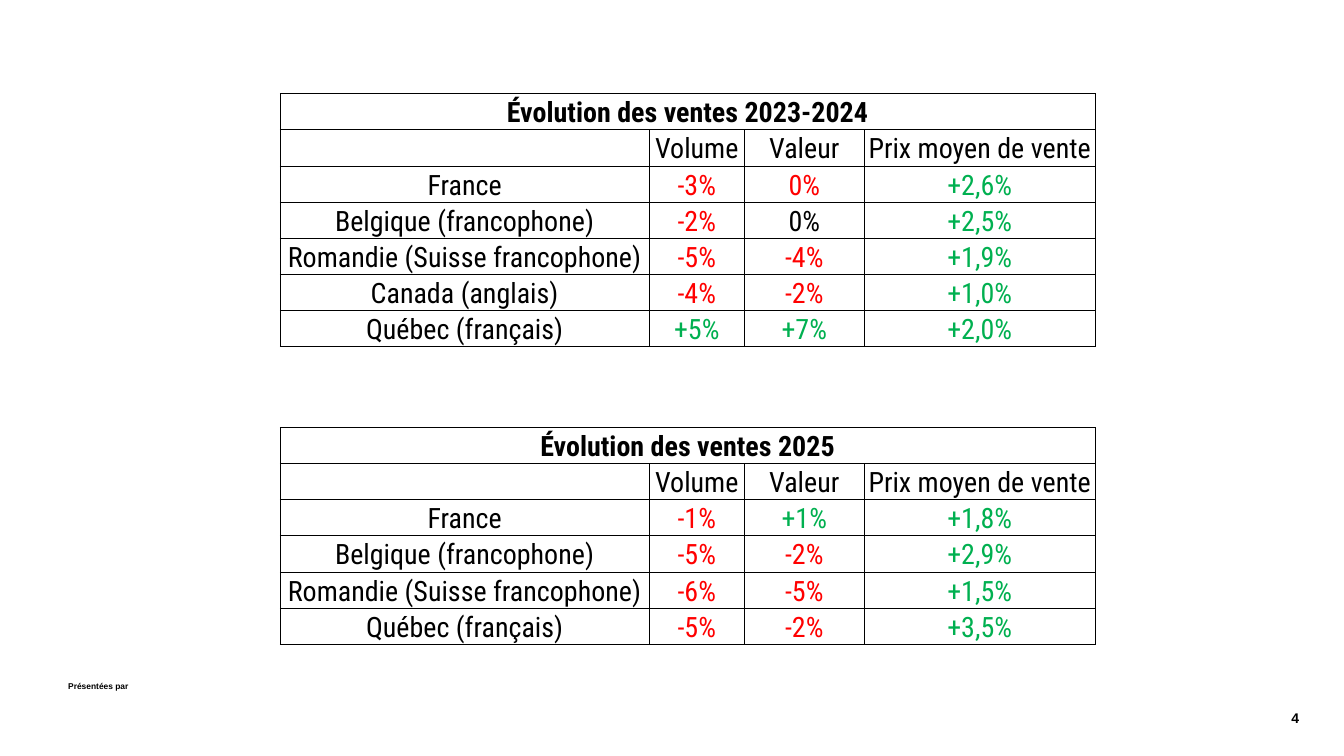
from dataclasses import dataclass

from lxml import etree
from pptx import Presentation
from pptx.dml.color import RGBColor
from pptx.enum.text import MSO_ANCHOR, PP_ALIGN
from pptx.oxml.ns import qn
from pptx.util import Cm, Pt

CENTER, LEFT, RIGHT = PP_ALIGN.CENTER, PP_ALIGN.LEFT, PP_ALIGN.RIGHT
BOTTOM = MSO_ANCHOR.BOTTOM

HEADINGS = ("", "Volume", "Valeur", "Prix moyen de vente")
SALES = [
    ("Évolution des ventes 2023-2024", 2.36, [
        ("France", "-3%", "0%", "+2,6%"),
        ("Belgique (francophone)", "-2%", "0%", "+2,5%"),
        ("Romandie (Suisse francophone)", "-5%", "-4%", "+1,9%"),
        ("Canada (anglais)", "-4%", "-2%", "+1,0%"),
        ("Québec (français)", "+5%", "+7%", "+2,0%"),
    ]),
    ("Évolution des ventes 2025", 10.77, [
        ("France", "-1%", "+1%", "+1,8%"),
        ("Belgique (francophone)", "-5%", "-2%", "+2,9%"),
        ("Romandie (Suisse francophone)", "-6%", "-5%", "+1,5%"),
        ("Québec (français)", "-5%", "-2%", "+3,5%"),
    ]),
]
RED_ZERO = ("France", "0%")
PRESENTER = ("Présentées par", (1.47, 17.04, 2.06, 0.51), 6, LEFT, False)
PAGE_NUMBER = ("4", (27.25, 17.75, 5.74, 0.69), 10, RIGHT, True)

TABLE_LEFT = 7.06
COLUMN_WIDTHS = (9.3, 2.4, 3.02, 5.82)
ROW_HEIGHT = 0.91
CELL_INSET = 0.02


@dataclass(frozen=True)
class Theme:
    table_font: str = "Roboto Condensed"
    footer_font: str = "Arial"
    table_size: int = 20
    border_width: float = 0.5
    ink: str = "000000"
    fall: str = "FF0000"
    rise: str = "00B050"


THEME = Theme()


def style(paragraph, font_name, size, color, bold, alignment):
    paragraph.alignment = alignment
    paragraph.font.name = font_name
    paragraph.font.size = Pt(size)
    paragraph.font.bold = bold
    paragraph.font.color.rgb = RGBColor.from_string(color)


def value_color(region, value):
    if value.startswith("-") or (region, value) == RED_ZERO:
        return THEME.fall
    return THEME.rise if value.startswith("+") else THEME.ink


def add_borders(cell):
    properties = cell._tc.get_or_add_tcPr()
    for side in ("a:lnL", "a:lnR", "a:lnT", "a:lnB"):
        border = etree.SubElement(properties, qn(side), w=str(Pt(THEME.border_width)))
        fill = etree.SubElement(border, qn("a:solidFill"))
        etree.SubElement(fill, qn("a:srgbClr"), val=THEME.ink)


def fill_cell(cell, label, color, bold):
    add_borders(cell)
    cell.fill.background()
    cell.vertical_anchor = BOTTOM
    cell.margin_left = cell.margin_right = cell.margin_top = Cm(CELL_INSET)
    cell.margin_bottom = 0
    cell.text = label
    style(cell.text_frame.paragraphs[0], THEME.table_font, THEME.table_size,
          color, bold, CENTER)


def add_sales_table(slide, heading, top, regions):
    rows = [(heading, "", "", ""), HEADINGS, *regions]
    table = slide.shapes.add_table(
        len(rows), len(HEADINGS), Cm(TABLE_LEFT), Cm(top),
        Cm(sum(COLUMN_WIDTHS)), Cm(ROW_HEIGHT * len(rows))).table
    table.first_row = table.horz_banding = False
    for column, width in zip(table.columns, COLUMN_WIDTHS):
        column.width = Cm(width)
    for row_index, row in enumerate(rows):
        table.rows[row_index].height = Cm(ROW_HEIGHT)
        for column_index, label in enumerate(row):
            fill_cell(table.cell(row_index, column_index), label,
                      value_color(row[0], label), row_index == 0)
    table.cell(0, 0).merge(table.cell(0, len(HEADINGS) - 1))


def add_footer(slide, label, place, size, alignment, wrap):
    frame = slide.shapes.add_textbox(*map(Cm, place)).text_frame
    frame.word_wrap = wrap
    frame.text = label
    style(frame.paragraphs[0], THEME.footer_font, size, THEME.ink, True, alignment)


def main():
    presentation = Presentation()
    presentation.slide_width, presentation.slide_height = Cm(33.87), Cm(19.05)
    slide = presentation.slides.add_slide(presentation.slide_layouts[6])
    for footer in (PRESENTER, PAGE_NUMBER):
        add_footer(slide, *footer)
    for sales in SALES:
        add_sales_table(slide, *sales)
    presentation.save("out.pptx")


if __name__ == "__main__":
    main()
